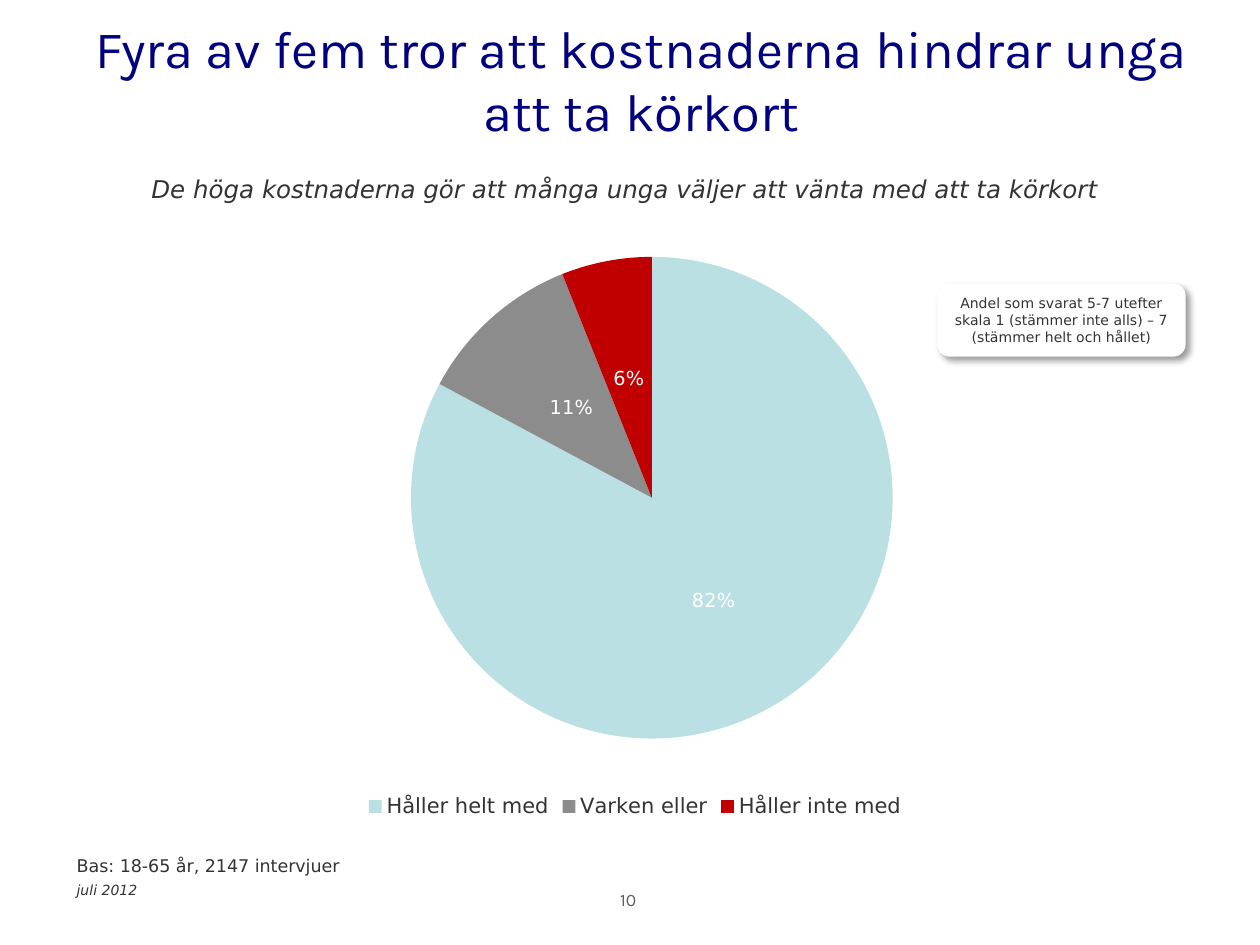
"""Build a survey slide with a pie chart, a note and footers."""
from pptx import Presentation
from pptx.chart.data import CategoryChartData
from pptx.dml.color import RGBColor
from pptx.enum.chart import XL_CHART_TYPE as ChartType
from pptx.enum.chart import XL_LABEL_POSITION as LabelPos
from pptx.enum.chart import XL_LEGEND_POSITION as LegendPos
from pptx.enum.shapes import MSO_SHAPE as Shape
from pptx.enum.text import MSO_ANCHOR as Anchor
from pptx.enum.text import PP_ALIGN as Align
from pptx.oxml import parse_xml
from pptx.oxml.ns import nsdecls
from pptx.util import Inches, Pt

BODY, HEAD = "DejaVu Sans", "Karla"
INK, NAVY, GREY, WHITE = "333333", "000080", "5F5F5F", "FFFFFF"
ANSWERS = [
    ("Håller helt med", 82, "BBE0E3"),
    ("Varken eller", 11, "8C8C8C"),
    ("Håller inte med", 6, "C00000"),
]


def rgb(color):
    """Turn a hex string into a colour."""
    return RGBColor.from_string(color)


def style_font(font, size, color, name=BODY, italic=False):
    """Set the look of a font."""
    font.name, font.size, font.italic, font.bold = name, Pt(size), italic, False
    font.color.rgb = rgb(color)


def write(tf, text, size, color=INK, name=BODY, align=Align.LEFT, italic=False):
    """Write one paragraph into a text frame."""
    tf.word_wrap = True
    p = tf.paragraphs[0]
    p.alignment = align
    r = p.add_run()
    r.text = text
    style_font(r.font, size, color, name, italic)


def add_text(slide, box, text, size, anchor=Anchor.TOP, **look):
    """Add a text box."""
    tf = slide.shapes.add_textbox(*map(Inches, box)).text_frame
    tf.vertical_anchor = anchor
    write(tf, text, size, **look)


def add_note(slide, box, text):
    """Add a white rounded note with a soft shadow."""
    sp = slide.shapes.add_shape(Shape.ROUNDED_RECTANGLE, *map(Inches, box))
    sp.fill.solid()
    sp.fill.fore_color.rgb = rgb(WHITE)
    sp.line.fill.background()
    sp._element.spPr.append(parse_xml(
        f'<a:effectLst {nsdecls("a")}>'
        f'<a:outerShdw blurRad="{Pt(4)}" dist="{Pt(3)}" dir="2700000" algn="tl" '
        'rotWithShape="0"><a:srgbClr val="000000"><a:alpha val="40000"/>'
        '</a:srgbClr></a:outerShdw></a:effectLst>'))
    tf = sp.text_frame
    tf.vertical_anchor = Anchor.MIDDLE
    tf.margin_top = tf.margin_bottom = Inches(0.06)
    write(tf, text, 8, align=Align.CENTER)


def place_plot(chart, x, y, w, h):
    """Fix the inner plot area as fractions of the chart."""
    plot_area = chart._chartSpace.chart.plotArea
    for layout in plot_area.findall("{*}layout"):
        plot_area.remove(layout)
    plot_area.insert(0, parse_xml(
        f'<c:layout {nsdecls("c")}><c:manualLayout><c:layoutTarget val="inner"/>'
        '<c:xMode val="edge"/><c:yMode val="edge"/>'
        f'<c:x val="{x}"/><c:y val="{y}"/><c:w val="{w}"/><c:h val="{h}"/>'
        '</c:manualLayout></c:layout>'))


def add_pie(slide, box, answers):
    """Add the pie chart with labels and a legend."""
    data = CategoryChartData()
    data.categories = [name for name, _, _ in answers]
    data.add_series("Series 1", [value for _, value, _ in answers])
    chart = slide.shapes.add_chart(ChartType.PIE, *map(Inches, box), data).chart
    style_font(chart.font, 12, INK)
    chart.has_title = False
    chart.has_legend = True
    chart.legend.position = LegendPos.BOTTOM
    chart.legend.include_in_layout = False
    style_font(chart.legend.font, 12, INK)
    plot = chart.plots[0]
    plot.vary_by_categories = True
    for i, (_, _, color) in enumerate(answers):
        fill = plot.series[0].points[i].format.fill
        fill.solid()
        fill.fore_color.rgb = rgb(color)
    plot.has_data_labels = True
    labels = plot.data_labels
    labels.show_value = True
    labels.number_format, labels.number_format_is_linked = '0"%"', False
    labels.position = LabelPos.CENTER
    style_font(labels.font, 11, WHITE)
    place_plot(chart, 0.2, 0.07, 0.63, 0.79)


def main():
    """Build and save the slide."""
    prs = Presentation()
    prs.slide_width, prs.slide_height = Inches(10), Inches(7.5)
    s = prs.slides.add_slide(prs.slide_layouts[6])
    add_text(s, (0.59, 0, 9, 1.25),
             "Fyra av fem tror att kostnaderna hindrar unga att ta körkort", 30,
             Anchor.MIDDLE, color=NAVY, name=HEAD, align=Align.CENTER)
    add_text(s, (0.47, 1.33, 8.98, 0.35),
             "De höga kostnaderna gör att många unga väljer att vänta med att ta körkort",
             14, align=Align.CENTER, italic=True)
    add_pie(s, (0.59, 1.7, 8.9, 4.84), ANSWERS)
    add_note(s, (7.44, 2.25, 1.97, 0.58),
             "Andel som svarat 5-7 utefter skala 1 (stämmer inte alls) – 7 "
             "(stämmer helt och hållet)")
    add_text(s, (0.51, 6.74, 4.49, 0.27), "Bas: 18-65 år, 2147 intervjuer", 10)
    add_text(s, (0.51, 6.95, 3.17, 0.3), "juli 2012", 8, italic=True)
    add_text(s, (3.82, 7.01, 2.33, 0.3), "10", 10, color=GREY, name=HEAD,
             align=Align.CENTER)
    prs.save("out.pptx")


if __name__ == "__main__":
    main()
